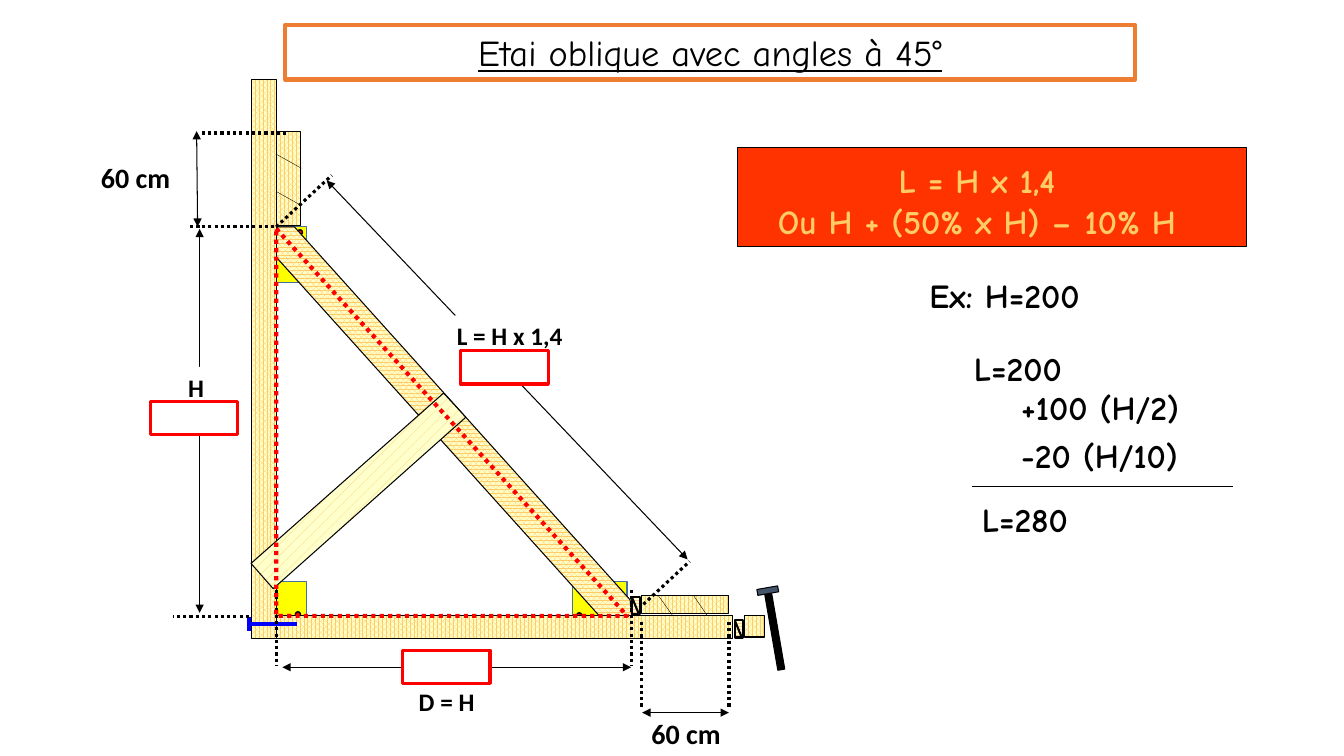
from lxml import etree
from pptx import Presentation
from pptx.dml.color import RGBColor
from pptx.enum.dml import MSO_LINE, MSO_PATTERN
from pptx.enum.shapes import MSO_CONNECTOR, MSO_SHAPE
from pptx.enum.text import MSO_ANCHOR, PP_ALIGN
from pptx.oxml.ns import qn
from pptx.util import Inches, Pt

RECT, OVAL = MSO_SHAPE.RECTANGLE, MSO_SHAPE.OVAL
DOTS, STRAIGHT = MSO_LINE.ROUND_DOT, MSO_CONNECTOR.STRAIGHT
WOOD, PALE_WOOD, ZIGZAG = MSO_PATTERN.PERCENT_75, MSO_PATTERN.PERCENT_10, MSO_PATTERN.ZIG_ZAG
CENTER, LEFT = PP_ALIGN.CENTER, PP_ALIGN.LEFT
HAND, PLAIN = "Comic Neue", "Calibri"
COLORS = {
    "black": "000000", "white": "FFFFFF", "red": "FF0000", "blue": "0000FF",
    "yellow": "FFFF00", "plate edge": "43739E", "orange": "ED7D31",
    "panel": "FF3300", "grain": "FFCC66", "wood": "FFFFCC",
    "wedge": "FFCC99", "steel": "44546A",
}
COLORS = {name: RGBColor.from_string(code) for name, code in COLORS.items()}

deck = Presentation()
deck.slide_width, deck.slide_height = Inches(13.33), Inches(7.5)
page = deck.slides.add_slide(deck.slide_layouts[6])


def add_part(outline, fill=None, line="black", width=0.75, pattern=None, kind=RECT, rotation=0):
    """Draw a preset from (left, top, width, height), or a polygon from a list of points."""
    if isinstance(outline, list):
        points = [(Inches(x), Inches(y)) for x, y in outline]
        builder = page.shapes.build_freeform(*points[0])
        builder.add_line_segments(points[1:], close=True)
        part = builder.convert_to_shape()
    else:
        part = page.shapes.add_shape(kind, *map(Inches, outline))
    part.rotation = rotation
    part.shadow.inherit = False
    if pattern:
        part.fill.patterned()
        part.fill.pattern = pattern
        part.fill.fore_color.rgb = COLORS[fill]
        part.fill.back_color.rgb = COLORS["wood"]
    elif fill:
        part.fill.solid()
        part.fill.fore_color.rgb = COLORS[fill]
    else:
        part.fill.background()
    part.line.color.rgb = COLORS[line]
    part.line.width = Pt(width)
    return part


def add_line(ends, color="black", width=0.75, dotted=False, arrows=False):
    line = page.shapes.add_connector(STRAIGHT, *map(Inches, ends))
    line.line.color.rgb = COLORS[color]
    line.line.width = Pt(width)
    if dotted:
        line.line.dash_style = DOTS
    if arrows:
        stroke = line.line._get_or_add_ln()
        for tip in ("a:headEnd", "a:tailEnd"):
            etree.SubElement(stroke, qn(tip), type="triangle")
    etree.SubElement(line._element.spPr, qn("a:effectLst"))


# Yellow corner plates, each with its visible nail
for plate_x, plate_y, nail_x, nail_y in [
    (5.68, 5.77, 5.72, 6.08), (2.5, 5.77, 2.93, 6.07), (2.5, 2.25, 2.95, 2.28),
]:
    add_part((plate_x, plate_y, 0.54, 0.55), "yellow", "plate edge", 1)
    add_part((nail_x, nail_y, 0.05, 0.05), "red", width=1, kind=OVAL)

# Title frame and formula panel
add_part((2.83, 0.25, 8.43, 0.54), None, "orange", 3)
add_part((7.31, 1.46, 5.05, 0.99), "panel")

# Stop blocks with their grain
add_part((6.36, 5.91, 0.87, 0.18), "grain", pattern=WOOD)
add_part((2.4, 1.65, 0.93, 0.24), "grain", pattern=WOOD, rotation=270)
for ends in [(6.71, 6.16, 6.53, 5.91), (7.05, 6.16, 6.88, 5.91),
             (2.67, 1.86, 2.99, 2.04), (2.67, 1.49, 2.99, 1.67)]:
    add_line(ends, width=0.25)

# Timbers: oblique beam, post, base, end block, brace
for outline, pattern in [
    ([(2.73, 2.54), (2.73, 2.25), (2.92, 2.25), (6.25, 5.95), (6.27, 6.17), (5.99, 6.16)], WOOD),
    ((2.49, 0.79, 0.25, 5.54), WOOD),
    ((2.74, 6.11, 4.53, 0.22), WOOD),
    ((7.38, 6.11, 0.2, 0.21), WOOD),
    ([(4.4, 3.9), (2.49, 5.59), (2.71, 5.84), (4.62, 4.14)], PALE_WOOD),
]:
    add_part(outline, "grain", pattern=pattern)

# Hammer
add_part((7.65, 5.89, 0.07, 0.76), "black", rotation=350.2)
add_part((7.51, 5.83, 0.21, 0.06), "steel", rotation=350.2)

# Blue nail through the post
add_line((2.47, 6.19, 2.95, 6.19), "blue", 3)
add_line((2.47, 6.12, 2.47, 6.26), "blue", 3)

# Dotted extension lines
for ends in [
    (2.47, 6.12, 1.72, 6.12), (2.72, 2.25, 1.85, 2.25), (2.72, 2.25, 1.97, 2.25),
    (2.84, 1.32, 1.97, 1.32), (6.26, 5.85, 6.26, 6.6), (2.74, 5.85, 2.74, 6.6),
    (2.74, 2.25, 3.29, 1.74), (6.29, 6.08, 6.84, 5.57),
    (7.23, 6.17, 7.23, 7.04), (6.36, 6.17, 6.36, 7.04),
]:
    add_line(ends, width=2.25, dotted=True)

# Wedges
for x, y in [(6.22, 5.97), (7.24, 6.2)]:
    add_part((x, y, 0.17, 0.08), "wedge", width=1.5, pattern=ZIGZAG, rotation=90)
    add_line((x + 0.12, y + 0.13, x + 0.05, y - 0.04), width=1.5)

# Right-angle triangle
triangle = add_part([(2.74, 2.27), (6.22, 6.11), (2.74, 6.11)], None, "red", 3)
triangle.line.dash_style = DOTS

# Dimension arrows and the sum line
for ends in [(1.98, 2.27, 1.98, 6.08), (2.8, 6.62, 6.26, 6.62), (6.82, 5.55, 3.24, 1.79),
             (1.95, 1.3, 1.96, 2.25), (6.37, 7.07, 7.23, 7.07)]:
    add_line(ends, arrows=True)
add_line((9.64, 4.83, 12.23, 4.83))

# Texts: place, lines, font, size, colour, bold, alignment, background
for place, lines, font, size, color, bold, align, back in [
    ((2.83, 0.25, 8.43, 0.54), ["Etai oblique avec angles à 45°"], HAND, 26, "black", False, CENTER, None),
    ((7.31, 1.54, 4.76, 0.91), ["L = H x 1,4", "Ou H + (50% x H) – 10% H"], HAND, 24, "grain", True, CENTER, None),
    ((9.12, 2.68, 2.05, 0.5), ["Ex: H=200"], HAND, 24, "black", True, LEFT, None),
    ((9.56, 3.4, 1.34, 0.5), ["L=200"], HAND, 24, "black", True, LEFT, None),
    ((10.03, 3.79, 2.36, 0.5), ["+100 (H/2)"], HAND, 24, "black", True, LEFT, None),
    ((10.03, 4.27, 2.36, 0.5), ["-20 (H/10)"], HAND, 24, "black", True, LEFT, None),
    ((9.64, 4.9, 1.34, 0.5), ["L=280"], HAND, 24, "black", True, LEFT, None),
    ((4.1, 6.76, 0.66, 0.35), ["D = H"], PLAIN, 18, "black", True, CENTER, None),
    ((1.79, 3.64, 0.31, 0.35), ["H"], PLAIN, 18, "black", True, CENTER, "white"),
    ((4.51, 3.13, 1.09, 0.35), ["L = H x 1,4"], PLAIN, 18, "black", True, CENTER, "white"),
    ((0.9, 1.54, 0.89, 0.44), ["60 cm"], PLAIN, 20, "black", True, CENTER, "white"),
    ((6.4, 7.06, 0.81, 0.44), ["60 cm"], PLAIN, 20, "black", True, CENTER, None),
]:
    box = page.shapes.add_textbox(*map(Inches, place))
    if back:
        box.fill.solid()
        box.fill.fore_color.rgb = COLORS[back]
    frame = box.text_frame
    frame.word_wrap = font == HAND
    if font == PLAIN:
        frame.margin_left = frame.margin_right = 0
    frame.vertical_anchor = MSO_ANCHOR.TOP
    frame.text = "\n".join(lines)
    for para in frame.paragraphs:
        para.alignment = align
        para.font.name, para.font.size, para.font.bold = font, Pt(size), bold
        para.font.color.rgb = COLORS[color]
        para.font.underline = not bold

# Empty answer boxes
for x, y in [(3.99, 6.45), (4.57, 3.48), (1.49, 3.98)]:
    add_part((x, y, 0.87, 0.33), "white", "red", 2.25)

deck.save("out.pptx")
